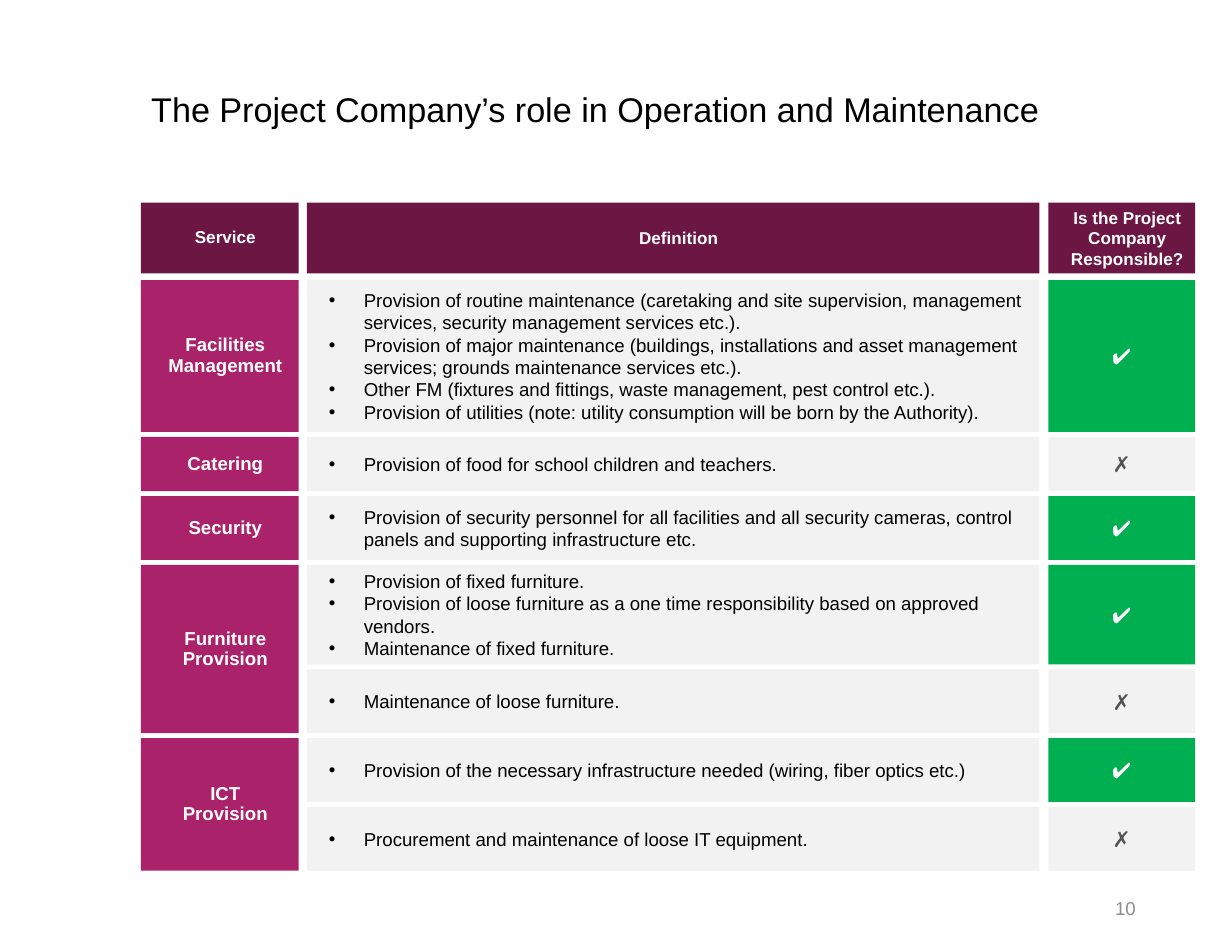
from dataclasses import dataclass
from lxml.etree import SubElement
from pptx import Presentation
from pptx.dml.color import RGBColor
from pptx.enum.shapes import MSO_SHAPE
from pptx.enum.text import MSO_ANCHOR, MSO_AUTO_SIZE, PP_ALIGN
from pptx.oxml.ns import qn
from pptx.util import Pt


@dataclass(frozen=True)
class Theme:
    font: str = "Arial"
    plum: str = "6C1643"
    pink: str = "AA2269"
    pale: str = "F2F2F2"
    green: str = "00B050"
    white: str = "FFFFFF"
    black: str = "000000"
    dark: str = "545454"
    gray: str = "8C8C8C"
    title: float = 22
    head: float = 11
    body: float = 12
    mark: float = 14


@dataclass(frozen=True)
class Column:
    left: float
    width: float
    head: str
    pitch: float


@dataclass(frozen=True)
class Row:
    height: float
    text: str
    done: bool


@dataclass(frozen=True)
class Service:
    name: str
    rows: tuple[Row, ...]


THEME = Theme()
GAP = 3.2
HEAD_TOP, HEAD_TALL, BODY_TOP = 130.3, 45.4, 180
NAME = Column(90.5, 101.5, "Service", 0.9)
TERM = Column(197.3, 470.9, "Definition", 1)
MARK = Column(673.9, 94.4, "Is the Project Company Responsible?", 1)

SERVICES = (
    Service("Facilities Management", (
        Row(97.6, "Provision of routine maintenance (caretaking and site supervision, "
                  "management services, security management services etc.).\n"
                  "Provision of major maintenance (buildings, installations and asset "
                  "management services; grounds maintenance services etc.).\n"
                  "Other FM (fixtures and fittings, waste management, pest control etc.).\n"
                  "Provision of utilities (note: utility consumption will be born by the "
                  "Authority).", True),
    )),
    Service("Catering", (
        Row(35, "Provision of food for school children and teachers.", False),
    )),
    Service("Security", (
        Row(41, "Provision of security personnel for all facilities and all security "
                "cameras, control panels and supporting infrastructure etc.", True),
    )),
    Service("Furniture Provision", (
        Row(64, "Provision of fixed furniture.\n"
                "Provision of loose furniture as a one time responsibility based on "
                "approved vendors.\n"
                "Maintenance of fixed furniture.", True),
        Row(41, "Maintenance of loose furniture.", False),
    )),
    Service("ICT\nProvision", (
        Row(41, "Provision of the necessary infrastructure needed (wiring, fiber "
                "optics etc.)", True),
        Row(41, "Procurement and maintenance of loose IT equipment.", False),
    )),
)


def write(frame, text: str, *, size: float, color: str, bold: bool = False,
          align=PP_ALIGN.LEFT, anchor=MSO_ANCHOR.MIDDLE, pitch: float = 1,
          margin: float = 0, hang: float = 0) -> None:
    frame.word_wrap = True
    frame.auto_size = MSO_AUTO_SIZE.NONE
    frame.vertical_anchor = anchor
    for count, line in enumerate(text.split("\n")):
        para = frame.add_paragraph() if count else frame.paragraphs[0]
        props = para._p.get_or_add_pPr()
        props.set("marL", str(Pt(margin)))
        props.set("indent", str(Pt(-hang)))
        if hang:
            SubElement(props, qn("a:buFont")).set("typeface", THEME.font)
            SubElement(props, qn("a:buChar")).set("char", "•")
        para.alignment = align
        para.line_spacing = pitch
        run = para.add_run()
        run.text = line
        run.font.name = THEME.font
        run.font.size = Pt(size)
        run.font.bold = bold
        run.font.color.rgb = RGBColor.from_string(color)


def block(slide, col: Column, top: float, height: float, fill: str):
    shape = slide.shapes.add_shape(
        MSO_SHAPE.RECTANGLE, Pt(col.left), Pt(top), Pt(col.width), Pt(height))
    shape.shadow.inherit = False
    shape.fill.solid()
    shape.fill.fore_color.rgb = RGBColor.from_string(fill)
    shape.line.fill.background()
    return shape.text_frame


def draw_heads(slide) -> None:
    for col in (NAME, TERM, MARK):
        frame = block(slide, col, HEAD_TOP, HEAD_TALL, THEME.plum)
        write(frame, col.head, size=THEME.head, color=THEME.white, bold=True,
              align=PP_ALIGN.CENTER, pitch=col.pitch, margin=7.2)


def draw_row(slide, row: Row, top: float) -> None:
    frame = block(slide, TERM, top, row.height, THEME.pale)
    write(frame, row.text, size=THEME.body, color=THEME.black, margin=29.5, hang=22.5)
    sign, fill, color = (("✔", THEME.green, THEME.white) if row.done
                         else ("✗", THEME.pale, THEME.dark))
    frame = block(slide, MARK, top, row.height, fill)
    write(frame, sign, size=THEME.mark, color=color, bold=True, align=PP_ALIGN.CENTER)


def draw_service(slide, item: Service, top: float) -> float:
    tall = sum(row.height + GAP for row in item.rows) - GAP
    frame = block(slide, NAME, top, tall, THEME.pink)
    write(frame, item.name, size=THEME.body, color=THEME.white, bold=True,
          align=PP_ALIGN.CENTER, pitch=NAME.pitch, margin=7.2)
    for row in item.rows:
        draw_row(slide, row, top)
        top += row.height + GAP
    return top


def main() -> None:
    deck = Presentation()
    deck.slide_width, deck.slide_height = Pt(792), Pt(612)
    slide = deck.slides.add_slide(deck.slide_layouts[5])
    title = slide.shapes.title
    title.left, title.top, title.width, title.height = Pt(90), Pt(56), Pt(648), Pt(55.5)
    write(title.text_frame, "The Project Company’s role in Operation and Maintenance",
          size=THEME.title, color=THEME.black, anchor=MSO_ANCHOR.TOP, pitch=0.9)
    draw_heads(slide)
    top = BODY_TOP
    for item in SERVICES:
        top = draw_service(slide, item, top)
    page = slide.shapes.add_textbox(Pt(559.5), Pt(567.4), Pt(177.8), Pt(32.4))
    write(page.text_frame, "10", size=THEME.body, color=THEME.gray, align=PP_ALIGN.RIGHT)
    deck.save("out.pptx")


if __name__ == "__main__":
    main()
